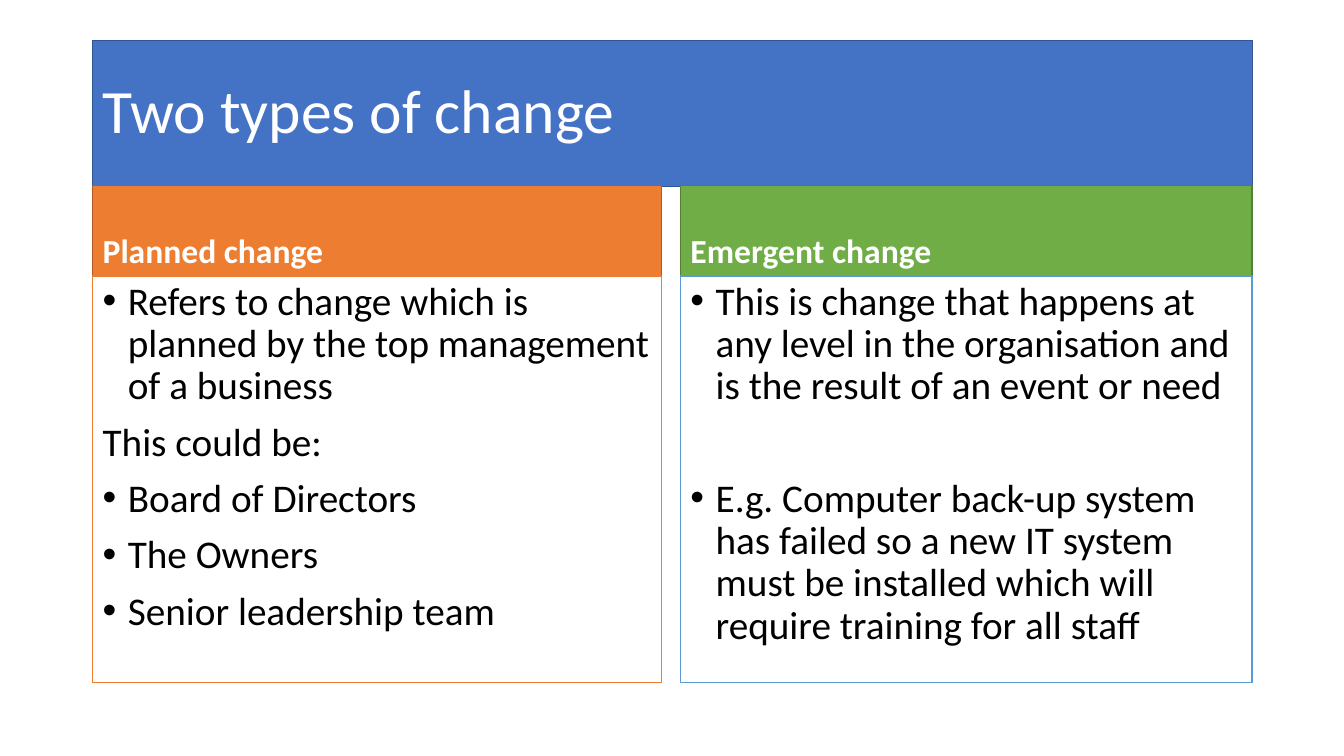
from lxml.etree import SubElement
from pptx import Presentation
from pptx.dml.color import RGBColor
from pptx.enum.shapes import MSO_SHAPE as SHAPE
from pptx.enum.text import MSO_ANCHOR as ANCHOR, MSO_AUTO_SIZE as AUTO, PP_ALIGN as ALIGN
from pptx.oxml.ns import qn
from pptx.util import Inches, Pt

WHITE, BLACK = RGBColor(255, 255, 255), RGBColor(0, 0, 0)
BLUE, DARK_BLUE = RGBColor(0x44, 0x72, 0xC4), RGBColor(0x32, 0x54, 0x91)
ORANGE, DARK_ORANGE = RGBColor(0xED, 0x7D, 0x31), RGBColor(0xAF, 0x5C, 0x24)
GREEN, DARK_GREEN = RGBColor(0x70, 0xAD, 0x47), RGBColor(0x53, 0x80, 0x35)
LIGHT_BLUE = RGBColor(0x5B, 0x9B, 0xD5)

# Content: paragraphs are (text, bulleted, space before in points)
TITLE = "Two types of change"
COLUMNS = [
    {"heading": "Planned change", "fill": ORANGE, "edge": DARK_ORANGE, "frame": ORANGE,
     "body": [("Refers to change which is planned by the top management of a business", True, 10),
              ("This could be:", False, 10),
              ("Board of Directors", True, 10),
              ("The Owners", True, 10),
              ("Senior leadership team", True, 10)]},
    {"heading": "Emergent change", "fill": GREEN, "edge": DARK_GREEN, "frame": LIGHT_BLUE,
     "body": [("This is change that happens at any level in the organisation"
               " and is the result of an event or need", True, 10),
              ("E.g. Computer back-up system has failed so a new IT system must be"
               " installed which will require training for all staff", True, 50)]},
]

# Grid in inches: column (left, width) and row (top, height)
FULL_WIDTH = (0.92, 11.5)
COLUMN_SPANS = [(0.92, 5.64), (6.75, 5.67)]
TITLE_ROW, HEADING_ROW, BODY_ROW = (0.4, 1.45), (1.84, 0.9), (2.74, 4.03)


def style_box(s, span, row, fill, edge, anchor):
    s.left, s.width = map(Inches, span)
    s.top, s.height = map(Inches, row)
    s.fill.solid()
    s.fill.fore_color.rgb = fill
    s.line.color.rgb = edge
    s.line.width = Pt(1)
    tf = s.text_frame
    tf.word_wrap = True
    tf.auto_size = AUTO.NONE
    tf.vertical_anchor = anchor


def write(s, paragraphs, size, color, bold=False):
    tf = s.text_frame
    tf.text = "\n".join(text for text, _, _ in paragraphs)
    for p, (_, bulleted, before) in zip(tf.paragraphs, paragraphs):
        p.alignment = ALIGN.LEFT
        p.line_spacing = 0.9
        p.space_before = Pt(before)
        r = p.runs[0]
        r.font.name, r.font.size, r.font.bold = "Calibri", Pt(size), bold
        r.font.color.rgb = color
        if bulleted:
            pPr = p._p.get_or_add_pPr()
            pPr.set("marL", str(Inches(0.25)))
            pPr.set("indent", str(-Inches(0.25)))
            SubElement(pPr, qn("a:buFont"), typeface="Arial")
            SubElement(pPr, qn("a:buChar"), char="•")


def add_box(span, row, fill, edge, anchor):
    s = slide.shapes.add_shape(SHAPE.RECTANGLE, 0, 0, 0, 0)
    s.shadow.inherit = False
    style_box(s, span, row, fill, edge, anchor)
    return s


prs = Presentation()
prs.slide_width, prs.slide_height = Inches(13.33), Inches(7.5)
slide = prs.slides.add_slide(prs.slide_layouts[5])

# Title band
title = slide.shapes.title
style_box(title, FULL_WIDTH, TITLE_ROW, BLUE, DARK_BLUE, ANCHOR.MIDDLE)
write(title, [(TITLE, False, 0)], 44, WHITE)

# Two columns, each a heading above a body
for column, span in zip(COLUMNS, COLUMN_SPANS):
    heading = add_box(span, HEADING_ROW, column["fill"], column["edge"], ANCHOR.BOTTOM)
    write(heading, [(column["heading"], False, 10)], 24, WHITE, bold=True)
    body = add_box(span, BODY_ROW, WHITE, column["frame"], ANCHOR.TOP)
    write(body, column["body"], 28, BLACK)

prs.save("out.pptx")
